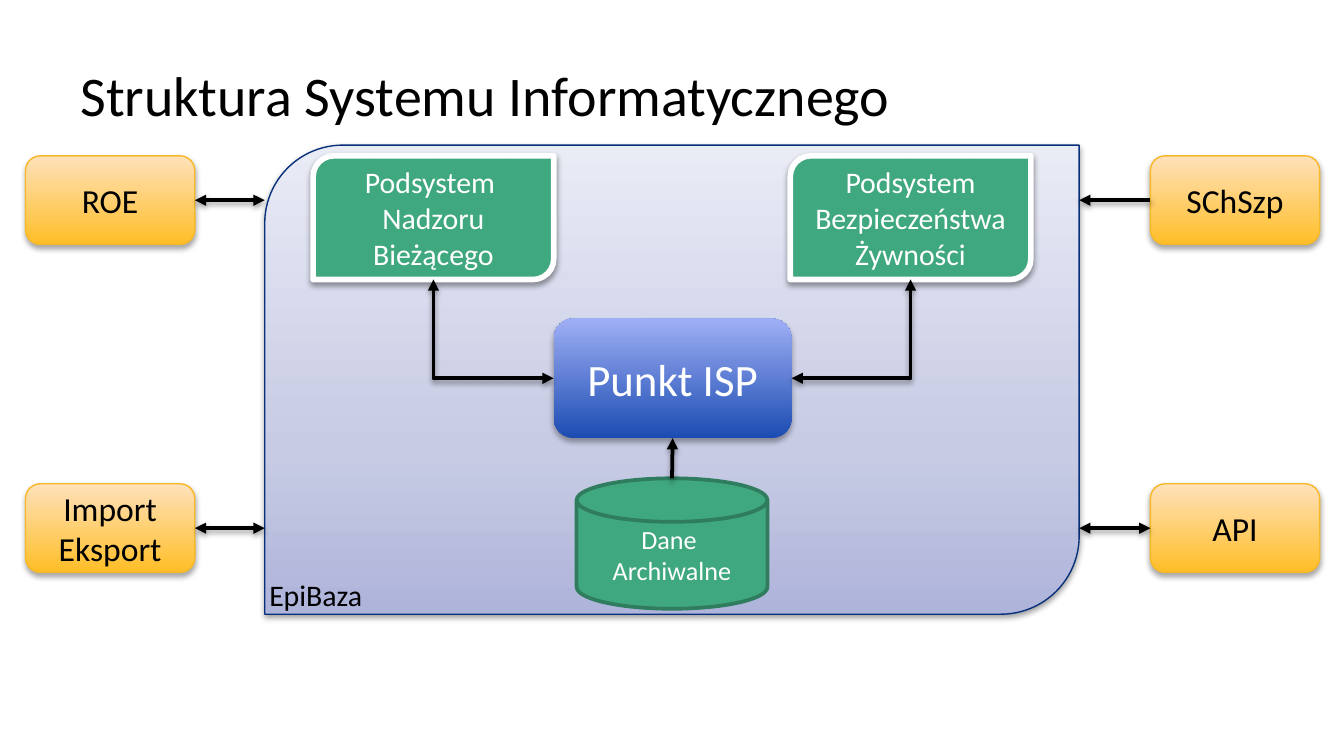
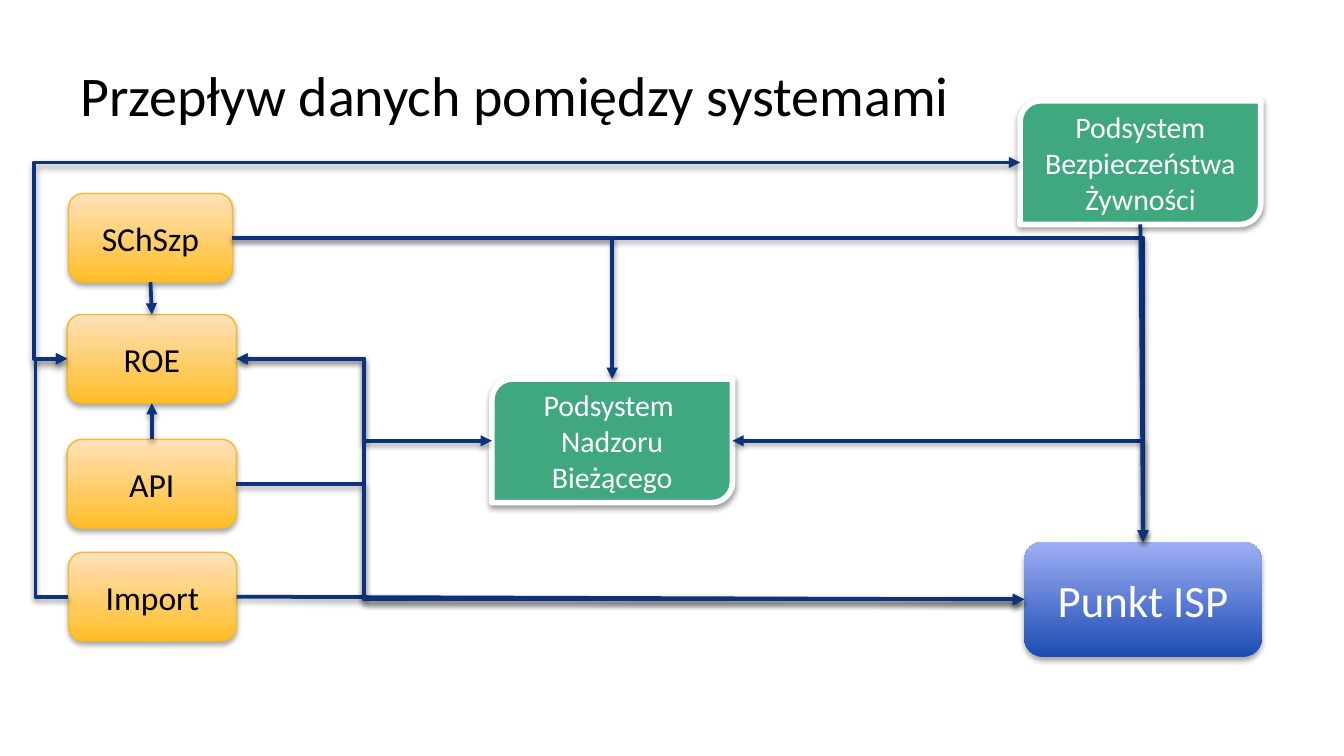
from dataclasses import dataclass

from lxml import etree
from pptx import Presentation
from pptx.dml.color import RGBColor
from pptx.enum.shapes import MSO_CONNECTOR, MSO_SHAPE
from pptx.enum.text import MSO_ANCHOR, PP_ALIGN
from pptx.oxml.ns import qn
from pptx.util import Inches, Pt

ROUNDED = MSO_SHAPE.ROUNDED_RECTANGLE
DIAGONAL = MSO_SHAPE.ROUND_2_DIAG_RECTANGLE
DISK = MSO_SHAPE.FLOWCHART_MAGNETIC_DISK
STRAIGHT, ELBOW = MSO_CONNECTOR.STRAIGHT, MSO_CONNECTOR.ELBOW
LEFT, CENTER = PP_ALIGN.LEFT, PP_ALIGN.CENTER
MIDDLE, TOP_ANCHOR = MSO_ANCHOR.MIDDLE, MSO_ANCHOR.TOP
TOP, LEFT_SIDE, BOTTOM, RIGHT_SIDE = range(4)


@dataclass(frozen=True)
class Theme:
    font: str = "Calibri"
    black: str = "000000"
    white: str = "FFFFFF"
    navy: str = "0B327B"
    title_size: int = 30
    label_size: int = 16
    line_width: float = 2


THEME = Theme()


@dataclass(frozen=True)
class BoxStyle:
    geometry: int
    fill: tuple  # one colour, or (position, colour) stops from bottom to top
    line: str = ""
    line_width: float = 0.75
    text: str = THEME.white
    size: int = 16
    shadow: tuple = (38, 1.6)  # opacity in percent, distance in points


STYLES = {
    "frame": BoxStyle(DIAGONAL, ((0, "AEB4DA"), (35, "C7CBE4"), (100, "E9EBF5")), "08307B"),
    "hub": BoxStyle(ROUNDED, ((0, "1C4CB2"), (100, "9FAFF5")), size=24, shadow=(35, 1.8)),
    "subsystem": BoxStyle(DIAGONAL, ("40A87F",), THEME.white, 3),
    "archive": BoxStyle(DISK, ("40A87F",), "2F7C5E", 2, size=14, shadow=()),
    "external": BoxStyle(ROUNDED, ((0, "FFBE27"), (100, "FFE1BB")), "F7B928",
                         text=THEME.black, size=18, shadow=(35, 1.8)),
}

SUPERVISION = ["Podsystem ", "Nadzoru Bieżącego"]
FOOD_SAFETY = ["Podsystem Bezpieczeństwa Żywności"]

# Boxes: name -> style, (left, top, width, height), paragraphs
# Links: start, end, two-headed, route; an end is (box, side) or a point.
# A route is None (straight), "corner", or the x of the vertical part.
SLIDES = [
    {
        "title": "Struktura Systemu Informatycznego",
        "link_color": THEME.black,
        "boxes": {
            "frame": ("frame", (1.97, 1.08, 6.06, 3.49), []),
            "hub": ("hub", (4.12, 2.37, 1.77, 0.89), ["Punkt ISP"]),
            "supervision": ("subsystem", (2.33, 1.16, 1.79, 0.92), SUPERVISION),
            "food": ("subsystem", (5.88, 1.16, 1.79, 0.92), FOOD_SAFETY),
            "archive": ("archive", (4.29, 3.56, 1.42, 0.97), ["Dane ", "Archiwalne"]),
            "ROE": ("external", (0.19, 1.16, 1.26, 0.66), ["ROE"]),
            "SChSzp": ("external", (8.56, 1.16, 1.26, 0.66), ["SChSzp"]),
            "Import": ("external", (0.19, 3.6, 1.26, 0.66), ["Import", "Eksport"]),
            "API": ("external", (8.56, 3.6, 1.26, 0.66), ["API"]),
        },
        "links": [
            (("hub", LEFT_SIDE), ("supervision", BOTTOM), True, "corner"),
            (("hub", RIGHT_SIDE), ("food", BOTTOM), True, "corner"),
            (("archive", TOP), ("hub", BOTTOM), False, None),
            (("ROE", RIGHT_SIDE), (1.97, 1.49), True, None),
            (("API", LEFT_SIDE), (8.03, 3.93), True, None),
            (("SChSzp", LEFT_SIDE), (8.03, 1.49), False, None),
            (("Import", RIGHT_SIDE), (1.97, 3.93), True, None),
        ],
        "caption": ("EpiBaza", (1.9, 4.24, 0.9, 0.37)),
    },
    {
        "title": "Przepływ danych pomiędzy systemami",
        "link_color": THEME.navy,
        "boxes": {
            "hub": ("hub", (7.62, 4.03, 1.77, 0.86), ["Punkt ISP"]),
            "supervision": ("subsystem", (3.66, 2.82, 1.79, 0.92), SUPERVISION),
            "food": ("subsystem", (7.59, 0.75, 1.79, 0.92), FOOD_SAFETY),
            "ROE": ("external", (0.5, 2.34, 1.26, 0.66), ["ROE"]),
            "SChSzp": ("external", (0.51, 1.44, 1.22, 0.66), ["SChSzp"]),
            "Import": ("external", (0.51, 4.11, 1.25, 0.66), ["Import"]),
            "API": ("external", (0.5, 3.27, 1.26, 0.66), ["API"]),
        },
        "links": [
            (("supervision", LEFT_SIDE), ("ROE", RIGHT_SIDE), True, 2.71),
            (("supervision", RIGHT_SIDE), ("hub", TOP), True, "corner"),
            (("ROE", LEFT_SIDE), ("food", LEFT_SIDE), True, 0.25),
            (("API", TOP), ("ROE", BOTTOM), False, None),
            (("Import", RIGHT_SIDE), ("hub", LEFT_SIDE), False, None),
            (("SChSzp", RIGHT_SIDE), ("hub", TOP), False, "corner"),
            (("food", BOTTOM), ("hub", TOP), False, None),
            (("Import", LEFT_SIDE), ("ROE", LEFT_SIDE), False, 0.26),
            (("ROE", RIGHT_SIDE), ("hub", LEFT_SIDE), True, 2.71),
            (("SChSzp", BOTTOM), ("ROE", TOP), False, None),
            (("API", RIGHT_SIDE), ("hub", LEFT_SIDE), False, 2.71),
            (("SChSzp", RIGHT_SIDE), ("supervision", TOP), False, "corner"),
        ],
    },
]


def add_element(parent, tag, **attributes):
    element = etree.SubElement(parent, qn(tag))
    for name, value in attributes.items():
        element.set(name, str(value))
    return element


def set_shadow(shape, opacity, distance):
    effects = add_element(shape._element.spPr, "a:effectLst")
    shadow = add_element(effects, "a:outerShdw", blurRad=Pt(3.1), dist=Pt(distance),
                         dir=90 * 60000, rotWithShape=0)
    color = add_element(shadow, "a:srgbClr", val=THEME.black)
    add_element(color, "a:alpha", val=opacity * 1000)


def set_fill(shape, colors):
    if len(colors) == 1:
        shape.fill.solid()
        shape.fill.fore_color.rgb = RGBColor.from_string(colors[0])
        return
    shape.fill.gradient()
    shape.fill.gradient_angle = 90
    stops = shape._element.spPr.find(".//" + qn("a:gsLst"))
    for stop in list(stops):
        stops.remove(stop)
    for position, color in colors:
        stop = add_element(stops, "a:gs", pos=position * 1000)
        add_element(stop, "a:srgbClr", val=color)


def write_text(shape, paragraphs, size, color, alignment=CENTER, anchor=MIDDLE, wrap=True):
    frame = shape.text_frame
    frame.word_wrap = wrap
    frame.vertical_anchor = anchor
    for index, text in enumerate(paragraphs):
        paragraph = frame.add_paragraph() if index else frame.paragraphs[0]
        paragraph.alignment = alignment
        run = paragraph.add_run()
        run.text = text
        run.font.name = THEME.font
        run.font.size = Pt(size)
        run.font.color.rgb = RGBColor.from_string(color)


def add_text(slide, text, bounds, size, **options):
    box = slide.shapes.add_textbox(*map(Inches, bounds))
    write_text(box, [text], size, THEME.black, **options)


def add_box(slide, style, bounds, paragraphs):
    shape = slide.shapes.add_shape(style.geometry, *map(Inches, bounds))
    set_fill(shape, style.fill)
    if style.line:
        shape.line.color.rgb = RGBColor.from_string(style.line)
        shape.line.width = Pt(style.line_width)
    else:
        shape.line.fill.background()
    if style.shadow:
        set_shadow(shape, *style.shadow)
    else:
        shape.shadow.inherit = False
    write_text(shape, paragraphs, style.size, style.text)
    return shape


def locate(end, shapes):
    """Give the box, if any, and the point where a link ends."""
    if end[0] not in shapes:
        return None, tuple(map(Inches, end))
    box, side = shapes[end[0]], end[1]
    across, down = [(0.5, 0), (0, 0.5), (0.5, 1), (1, 0.5)][side]
    return box, (box.left + int(box.width * across), box.top + int(box.height * down))


def add_link(slide, shapes, color, start, end, two_headed, route):
    (start_box, start_point), (end_box, end_point) = locate(start, shapes), locate(end, shapes)
    kind = STRAIGHT if route is None else ELBOW
    link = slide.shapes.add_connector(kind, *start_point, *end_point)
    if start_box and start_box.auto_shape_type == ROUNDED:
        link.begin_connect(start_box, start[1])
    if end_box and end_box.auto_shape_type == ROUNDED:
        link.end_connect(end_box, end[1])

    # Bend
    geometry = link._element.spPr.find(qn("a:prstGeom"))
    if route == "corner":
        geometry.set("prst", "bentConnector2")
    elif route is not None:
        share = (Inches(route) - start_point[0]) / (end_point[0] - start_point[0])
        add_element(geometry.find(qn("a:avLst")), "a:gd", name="adj1",
                    fmla=f"val {round(share * 100000)}")

    # Line, arrowheads and shadow
    link.line.color.rgb = RGBColor.from_string(color)
    link.line.width = Pt(THEME.line_width)
    line = link.line._get_or_add_ln()
    if two_headed:
        add_element(line, "a:headEnd", type="triangle")
    add_element(line, "a:tailEnd", type="triangle")
    set_shadow(link, 38, 1.6)


def build_slide(presentation, content):
    slide = presentation.slides.add_slide(presentation.slide_layouts[6])
    add_text(slide, content["title"], (0.5, 0.23, 9, 0.94), THEME.title_size, alignment=LEFT)
    shapes = {name: add_box(slide, STYLES[style], bounds, paragraphs)
              for name, (style, bounds, paragraphs) in content["boxes"].items()}
    for link in content["links"]:
        add_link(slide, shapes, content["link_color"], *link)
    if "caption" in content:
        add_text(slide, *content["caption"], THEME.label_size, anchor=TOP_ANCHOR, wrap=False)


def main():
    presentation = Presentation()
    presentation.slide_width = Inches(10)
    presentation.slide_height = Inches(10) * 9 // 16
    for content in SLIDES:
        build_slide(presentation, content)
    presentation.save("out.pptx")


if __name__ == "__main__":
    main()
